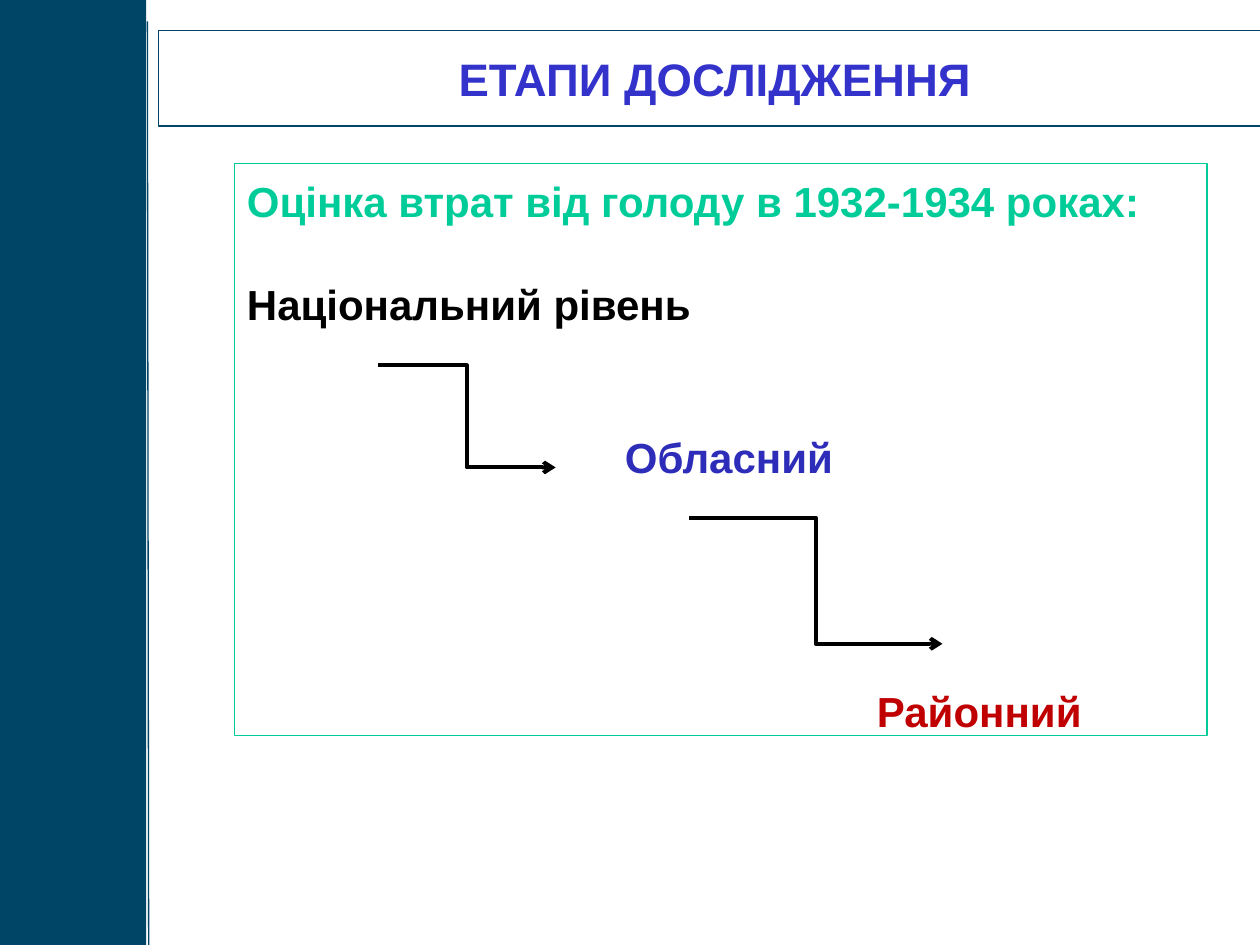
from dataclasses import dataclass

from lxml.etree import SubElement
from pptx import Presentation
from pptx.dml.color import RGBColor
from pptx.enum.shapes import MSO_CONNECTOR, MSO_SHAPE
from pptx.enum.text import MSO_ANCHOR, MSO_AUTO_SIZE, PP_ALIGN
from pptx.oxml.ns import qn
from pptx.util import Inches, Pt

NAVY, GREEN, BLACK, WHITE = "004466", "00CC99", "000000", "FFFFFF"


@dataclass
class Stage:
    text: str
    color: str
    indent: float  # inches
    gap: float  # points above


@dataclass
class Line:
    start: tuple[float, float]
    end: tuple[float, float]
    color: str = NAVY
    width: float = 0.75
    arrow: bool = False


STAGES = [
    Stage("Оцінка втрат від голоду в 1932-1934 роках:", GREEN, 0, 0),
    Stage("Національний рівень", BLACK, 0, 30),
    Stage("Обласний", "2D2DB9", 3, 58.8),
    Stage("Районний", "C00000", 5, 116.4),
]
LINES = [
    Line((1.15, 0), (1.15, 7.5)),
    Line((1.17, 0.17), (1.18, 7.5)),
    Line((3, 2.9), (4.41, 3.71), BLACK, 2.25, True),
    Line((5.47, 4.11), (7.48, 5.11), BLACK, 2.25, True),
]


def rgb(color: str) -> RGBColor:
    return RGBColor.from_string(color)


def place(shape, left: float, top: float, width: float, height: float) -> None:
    shape.left, shape.top = Inches(left), Inches(top)
    shape.width, shape.height = Inches(width), Inches(height)


def outline(shape, color: str, width: float = 0.75) -> None:
    shape.line.color.rgb = rgb(color)
    shape.line.width = Pt(width)


def format_text(paragraph, size: float, color: str) -> None:
    font = paragraph.font
    font.name, font.size, font.bold = "Arial", Pt(size), True
    font.color.rgb = rgb(color)


def add_line(slide, line: Line) -> None:
    kind = MSO_CONNECTOR.ELBOW if line.arrow else MSO_CONNECTOR.STRAIGHT
    points = [Inches(value) for value in (*line.start, *line.end)]
    connector = slide.shapes.add_connector(kind, *points)
    outline(connector, line.color, line.width)
    properties = connector._element.spPr
    if line.arrow:
        SubElement(properties.find(qn("a:ln")), qn("a:tailEnd"), type="arrow")
    SubElement(properties, qn("a:effectLst"))


def add_stage(paragraph, stage: Stage) -> None:
    paragraph.text = stage.text
    paragraph.space_before = Pt(stage.gap)
    # Indent without a bullet
    properties = paragraph._p.get_or_add_pPr()
    properties.set("marL", str(Inches(stage.indent)))
    properties.set("indent", "0")
    SubElement(properties, qn("a:buNone"))
    format_text(paragraph, 24, stage.color)


def main() -> None:
    presentation = Presentation()
    presentation.slide_width, presentation.slide_height = Inches(10), Inches(7.5)
    slide = presentation.slides.add_slide(presentation.slide_layouts[1])
    title, body = slide.placeholders

    # Side band
    band = slide.shapes.add_shape(MSO_SHAPE.RECTANGLE, 0, 0, Inches(1.16), Inches(7.5))
    band.shadow.inherit = False
    band.fill.solid()
    band.fill.fore_color.rgb = rgb(NAVY)
    band.line.fill.background()

    # Title box
    place(title, 1.26, 0.24, 8.83, 0.76)
    title.fill.solid()
    title.fill.fore_color.rgb = rgb(WHITE)
    outline(title, NAVY)
    title.text_frame.text = "ЕТАПИ ДОСЛІДЖЕННЯ"
    title.text_frame.auto_size = MSO_AUTO_SIZE.NONE
    title.text_frame.vertical_anchor = MSO_ANCHOR.MIDDLE
    heading = title.text_frame.paragraphs[0]
    heading.alignment = PP_ALIGN.CENTER
    format_text(heading, 26, "3333CC")

    # Levels of the study
    place(body, 1.86, 1.3, 7.72, 4.54)
    outline(body, GREEN)
    frame = body.text_frame
    frame.auto_size = MSO_AUTO_SIZE.NONE
    frame.margin_top = Inches(0.09)
    for index, stage in enumerate(STAGES):
        add_stage(frame.add_paragraph() if index else frame.paragraphs[0], stage)

    # Band edges and arrows between levels
    for line in LINES:
        add_line(slide, line)

    presentation.save("out.pptx")


if __name__ == "__main__":
    main()
